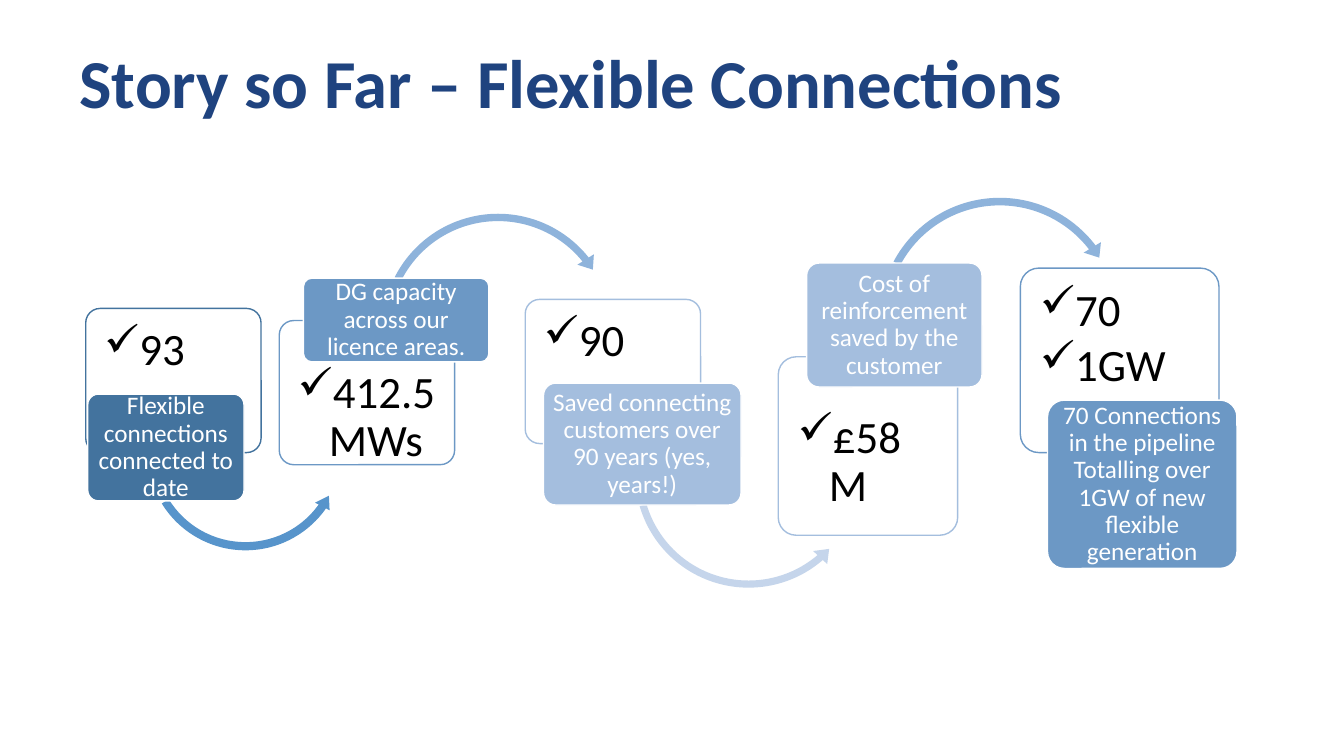
from collections import namedtuple
from dataclasses import dataclass

from lxml import etree
from pptx import Presentation
from pptx.dml.color import RGBColor
from pptx.enum.shapes import MSO_SHAPE
from pptx.enum.text import MSO_ANCHOR, PP_ALIGN
from pptx.oxml.ns import qn
from pptx.util import Inches, Pt

ROUND = MSO_SHAPE.ROUNDED_RECTANGLE
OVER, UNDER = MSO_SHAPE.CIRCULAR_ARROW, MSO_SHAPE.LEFT_CIRCULAR_ARROW
TOP, MIDDLE = MSO_ANCHOR.TOP, MSO_ANCHOR.MIDDLE
LEFT, CENTER = PP_ALIGN.LEFT, PP_ALIGN.CENTER
WIDE, HIGH = Inches(13.33), Inches(7.5)


@dataclass(frozen=True)
class Theme:
    font: str = "Calibri"
    title: str = "1F437F"
    ink: str = "000000"
    paper: str = "FFFFFF"
    dark: str = "43739E"
    mid: str = "6C98C5"
    light: str = "A4BEDE"
    head: int = 49
    fact: int = 32
    note: int = 18


T = Theme()

# Boxes are left, top, width, height in percent of the slide
Step = namedtuple("Step", "color card facts label note raised")
STEPS = [
    Step(T.dark, (6.38, 40.8, 13.05, 19.07), ["93"],
         (6.53, 52.13, 11.63, 14.13), "Flexible connections connected to date", False),
    Step(T.mid, (20.78, 42.4, 13.05, 19.07), ["412.5MWs"],
         (22.58, 36.8, 13.8, 11.07), "DG capacity across our licence areas.", True),
    Step(T.light, (39.08, 39.6, 13.05, 19.07), ["90"],
         (40.44, 50.67, 14.7, 16.13),
         "Saved connecting customers over 90 years (yes, years!)", False),
    Step(T.light, (57.91, 47.2, 13.35, 23.6), ["£58M"],
         (60.02, 34.8, 13.05, 16.4), "Cost of reinforcement saved by the customer", True),
    Step(T.mid, (75.92, 35.47, 14.78, 24.4), ["70", "1GW"],
         (77.94, 52.93, 14.1, 22.27),
         "70 Connections in the pipeline Totalling over 1GW of new flexible generation",
         False),
]

# Each arrow leads on from the step in the same place: left, top, size
Arrow = namedtuple("Arrow", "kind left top size color bend")
ARROWS = [
    Arrow(UNDER, 10.65, 46.27, 15.23, "5794CB", (0.04, 4.61, 21.17, 89.05, 0.04)),
    Arrow(OVER, 27.98, 27.47, 18.15, "8EB3DB", (0.03, 3.81, 192.8, 124.12, 0.04)),
    Arrow(UNDER, 46.81, 46.93, 17.78, "C5D5EB", (0.03, 3.9, 29.6, 98.19, 0.04)),
    Arrow(OVER, 64.97, 25.33, 18.83, "8EB3DB", (0.03, 3.66, 193.61, 124.78, 0.04)),
]


def place(box):
    left, top, wide, high = (share / 100 for share in box)
    return int(left * WIDE), int(top * HIGH), int(wide * WIDE), int(high * HIGH)


def paint(shape, fill, line=None):
    shape.shadow.inherit = False
    shape.fill.solid()
    shape.fill.fore_color.rgb = RGBColor.from_string(fill)
    if line:
        shape.line.color.rgb = RGBColor.from_string(line)
        shape.line.width = Pt(1)
    else:
        shape.line.fill.background()


def fade(shape, share):
    color = shape.fill._xPr.find(".//" + qn("a:srgbClr"))
    etree.SubElement(color, qn("a:alpha"), val=str(share * 1000))


def tick(para):
    props = para._p.get_or_add_pPr()
    props.set("marL", str(Inches(0.31)))
    props.set("indent", str(-Inches(0.31)))
    etree.SubElement(props, qn("a:buChar"), char="✓")


def write(shape, lines, size, color, align=LEFT, anchor=MIDDLE,
          pad=(0.1, 0.05), bold=False, ticks=False):
    frame = shape.text_frame
    frame.word_wrap = True
    frame.vertical_anchor = anchor
    frame.margin_left = frame.margin_right = Inches(pad[0])
    frame.margin_top = frame.margin_bottom = Inches(pad[1])
    frame.text = "\n".join(lines)
    for para in frame.paragraphs:
        para.alignment = align
        para.line_spacing = 0.9
        if ticks:
            para.space_after = Pt(0.15 * size)
            tick(para)
        para.font.name = T.font
        para.font.size = Pt(size)
        para.font.bold = bold
        para.font.color.rgb = RGBColor.from_string(color)


def panel(shapes, box, fill, line):
    shape = shapes.add_shape(ROUND, *place(box))
    shape.adjustments[0] = 0.1
    paint(shape, fill, line)
    return shape


def add_card(shapes, step):
    card = panel(shapes, step.card, T.paper, step.color)
    fade(card, 90)
    write(card, step.facts, T.fact, T.ink, anchor=TOP, pad=(0.14, 0.14), ticks=True)
    if step.raised:  # keep facts clear of the label above
        card.text_frame.margin_top += int(card.height * 3 / 14)


def add_label(shapes, step):
    label = panel(shapes, step.label, step.color, T.paper)
    write(label, [step.note], T.note, T.paper, CENTER, pad=(0.04, 0.03))


def add_arrow(shapes, arrow):
    left, top, size, _ = place((arrow.left, arrow.top, arrow.size, 0))
    shape = shapes.add_shape(arrow.kind, left, top, size, size)
    for i, value in enumerate(arrow.bend):
        shape.adjustments[i] = value
    paint(shape, arrow.color)


def main():
    deck = Presentation()
    deck.slide_width, deck.slide_height = WIDE, HIGH
    shapes = deck.slides.add_slide(deck.slide_layouts[6]).shapes

    # Title
    title = shapes.add_textbox(*place((5.18, 8.27, 76.29, 6.4)))
    write(title, ["Story so Far – Flexible Connections"], T.head, T.title, bold=True)

    # Steps, each with its card, arrow onward and label
    for i, step in enumerate(STEPS):
        add_card(shapes, step)
        if i < len(ARROWS):
            add_arrow(shapes, ARROWS[i])
        add_label(shapes, step)

    deck.save("out.pptx")


if __name__ == "__main__":
    main()
